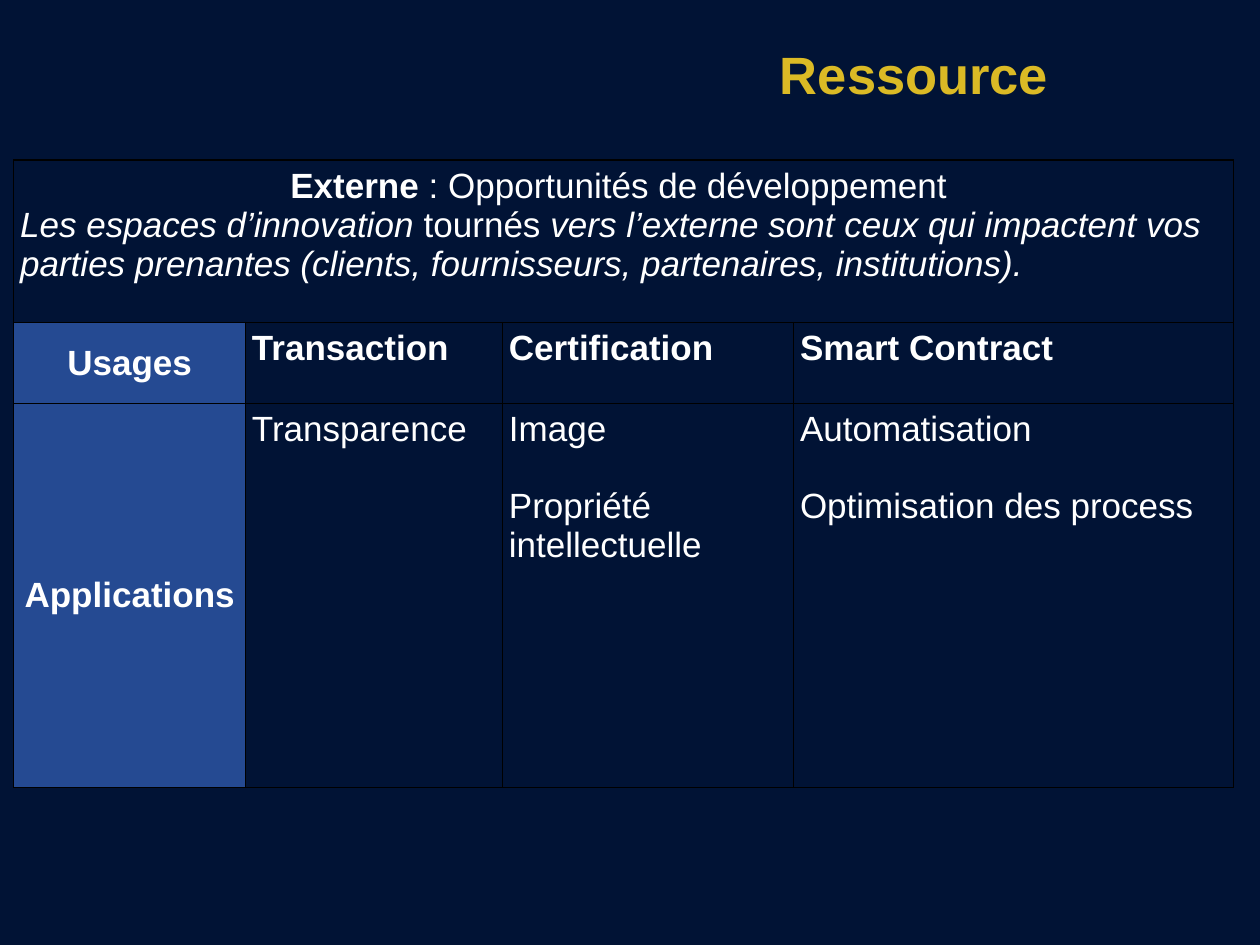
"""Build the "Ressource" slide: a table of external development opportunities."""
from lxml import etree
from pptx import Presentation
from pptx.dml.color import RGBColor
from pptx.enum import text
from pptx.oxml import ns
from pptx.util import Inches, Pt

COLORS = {"night": "011335", "blue": "254A92", "gold": "DBBA25",
          "white": "FFFFFF", "black": "000000"}
FONT = "Arial"
TITLE = "Ressource"
INTRO = [
    [("Externe", "b"), (" : Opportunités de développement ", "")],
    [("Les espaces d’innovation ", "i"), ("tournés", ""),
     (" vers l’externe sont ceux qui impactent vos parties prenantes "
      "(clients, fournisseurs, partenaires, institutions).", "i")],
]
USES = [("Usages", ["Transaction"], ["Certification"], ["Smart Contract"]),
        ("Applications ", ["Transparence"], ["Image", "Propriété intellectuelle"],
         ["Automatisation", "Optimisation des process"])]
COLUMNS = [1.84, 2.04, 2.31, 3.49]
ROWS = [1.29, 0.64, 3.05]


def color(name):
    return RGBColor.from_string(COLORS[name])


def style(span, size, tint, bold=False, italic=False):
    span.font.name = FONT
    span.font.size = Pt(size)
    span.font.color.rgb = color(tint)
    span.font.bold = bold
    span.font.italic = italic


def write(cell, paragraphs, gap=0):
    frame = cell.text_frame
    for index, spans in enumerate(paragraphs):
        para = frame.add_paragraph() if index else frame.paragraphs[0]
        if index and gap:
            para.space_before = Pt(gap)
        for words, marks in spans:
            span = para.add_run()
            span.text = words
            style(span, 20, "white", "b" in marks, "i" in marks)


def add_borders(cell):
    properties = cell._tc.get_or_add_tcPr()
    for index, side in enumerate(("lnL", "lnR", "lnT", "lnB")):
        line = etree.Element(ns.qn("a:" + side), w=str(Pt(0.75)))
        fill = etree.SubElement(line, ns.qn("a:solidFill"))
        etree.SubElement(fill, ns.qn("a:srgbClr"), val=COLORS["black"])
        properties.insert(index, line)


def add_title(page):
    box = page.shapes.title
    box.left, box.top, box.width, box.height = map(Inches, (6.09, 0.23, 2.49, 0.71))
    frame = box.text_frame
    frame.text = TITLE
    frame.auto_size = text.MSO_AUTO_SIZE.NONE
    frame.vertical_anchor = text.MSO_ANCHOR.TOP
    frame.margin_left = frame.margin_right = Inches(0.1)
    frame.margin_top = frame.margin_bottom = Inches(0.1)
    para = frame.paragraphs[0]
    para.alignment = text.PP_ALIGN.LEFT
    style(para.runs[0], 30, "gold", bold=True)


def add_uses_table(page):
    table = page.shapes.add_table(
        len(ROWS), len(COLUMNS), Inches(0.11), Inches(1.27),
        Inches(sum(COLUMNS)), Inches(sum(ROWS))).table
    table.first_row = table.horz_banding = False
    for column, width in zip(table.columns, COLUMNS):
        column.width = Inches(width)
    for row, height in zip(table.rows, ROWS):
        row.height = Inches(height)
    for cell in table.iter_cells():
        cell.fill.background()
        cell.margin_left = cell.margin_right = Inches(0.05)
        cell.margin_top = cell.margin_bottom = Inches(0.05)
        add_borders(cell)

    heading = table.cell(0, 0)
    heading.merge(table.cell(0, len(COLUMNS) - 1))
    write(heading, INTRO)
    heading.text_frame.paragraphs[0].alignment = text.PP_ALIGN.CENTER

    for row, (label, *entries) in enumerate(USES, 1):
        side = table.cell(row, 0)
        side.fill.solid()
        side.fill.fore_color.rgb = color("blue")
        side.vertical_anchor = text.MSO_ANCHOR.MIDDLE
        write(side, [[(label, "b")]])
        side.text_frame.paragraphs[0].alignment = text.PP_ALIGN.CENTER
        marks = "b" if row == 1 else ""
        for column, lines in enumerate(entries, 1):
            write(table.cell(row, column), [[(line, marks)] for line in lines], gap=22)


def main():
    deck = Presentation()
    deck.slide_width, deck.slide_height = Inches(10), Inches(7.5)
    page = deck.slides.add_slide(deck.slide_layouts.get_by_name("Title Only"))
    page.background.fill.solid()
    page.background.fill.fore_color.rgb = color("night")
    add_uses_table(page)
    add_title(page)
    deck.save("out.pptx")


if __name__ == "__main__":
    main()
